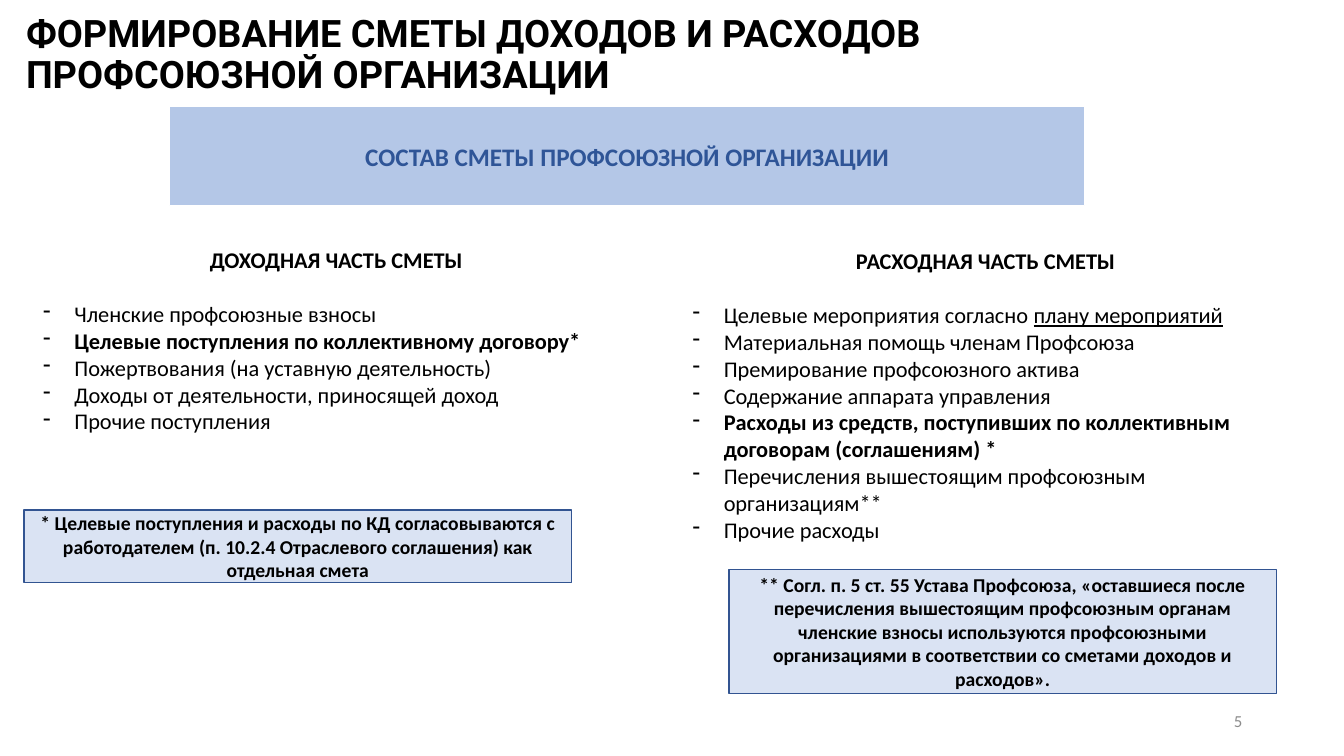
from lxml import etree
from pptx import Presentation
from pptx import util as u
from pptx.dml.color import RGBColor
from pptx.enum import shapes, text
from pptx.oxml import parse_xml
from pptx.oxml.ns import qn

DRAWING_NS = "http://schemas.openxmlformats.org/drawingml/2006/main"
TITLE_SHADOW = (
    f'<a:effectLst xmlns:a="{DRAWING_NS}"><a:outerShdw blurRad="50800" dist="38100" '
    'dir="5400000" algn="t" rotWithShape="0"><a:srgbClr val="000000">'
    '<a:alpha val="50000"/></a:srgbClr></a:outerShdw></a:effectLst>')
LEFT, CENTER, RIGHT = text.PP_ALIGN.LEFT, text.PP_ALIGN.CENTER, text.PP_ALIGN.RIGHT
TOP, MIDDLE = text.MSO_ANCHOR.TOP, text.MSO_ANCHOR.MIDDLE

INCOME = [
    [("Членские профсоюзные взносы", {})],
    [("Целевые поступления по коллективному договору*", {"bold": True})],
    [("Пожертвования (на уставную деятельность)", {})],
    [("Доходы от деятельности, приносящей доход", {})],
    [("Прочие поступления", {})],
]
EXPENSES = [
    [("Целевые мероприятия согласно ", {}), ("плану мероприятий", {"underline": True})],
    [("Материальная помощь членам Профсоюза", {})],
    [("Премирование профсоюзного актива", {})],
    [("Содержание аппарата управления", {})],
    [("Расходы из средств, поступивших по коллективным договорам (соглашениям) *",
      {"bold": True})],
    [("Перечисления вышестоящим профсоюзным организациям**", {})],
    [("Прочие расходы", {})],
]
INCOME_NOTE = ("* Целевые поступления и расходы по КД согласовываются с работодателем "
               "(п. 10.2.4 Отраслевого соглашения) как отдельная смета")
EXPENSE_NOTE = ("** Согл. п. 5 ст. 55 Устава Профсоюза, «оставшиеся после перечисления "
                "вышестоящим профсоюзным органам членские взносы используются "
                "профсоюзными организациями в соответствии со сметами доходов и расходов».")


def color(value):
    """Turn a hex string into a colour."""
    return RGBColor.from_string(value)


def write(para, words, size=16, font="Calibri", fill="000000", bold=False,
          underline=False, align=LEFT):
    """Add one formatted span to a paragraph and return it."""
    para.alignment = align
    span = para.add_run()
    span.text = words
    span.font.size = u.Pt(size)
    span.font.name = font
    span.font.bold = bold
    span.font.underline = underline
    span.font.color.rgb = color(fill)
    return span


def add_text_box(page, box, anchor=MIDDLE):
    """Add a wrapping text box and return its first paragraph."""
    frame = page.shapes.add_textbox(*map(u.Inches, box)).text_frame
    frame.word_wrap = True
    frame.vertical_anchor = anchor
    return frame.paragraphs[0]


def add_panel(page, box, fill, line, width=0.75, anchor=MIDDLE):
    """Add a filled, outlined rectangle and return its text frame."""
    panel = page.shapes.add_shape(shapes.MSO_SHAPE.RECTANGLE, *map(u.Inches, box))
    panel.shadow.inherit = False
    panel.fill.solid()
    panel.fill.fore_color.rgb = color(fill)
    panel.line.color.rgb = color(line)
    panel.line.width = u.Pt(width)
    frame = panel.text_frame
    frame.word_wrap = True
    frame.vertical_anchor = anchor
    return frame


def add_title(page, box, words):
    """Add the slide title with its soft text shadow."""
    para = add_text_box(page, box)
    para.line_spacing = 0.9
    span = write(para, words, size=27, font="Roboto", bold=True)
    span.font.fill._xPr.find(qn("a:solidFill")).addnext(parse_xml(TITLE_SHADOW))


def add_banner(page, box, words):
    """Add the wide heading band."""
    frame = add_panel(page, box, "B4C7E7", "FFFFFF")
    write(frame.paragraphs[0], words, size=18, fill="2F5597", bold=True, align=CENTER)


def add_budget_part(page, box, heading, items):
    """Add a heading with a dashed list below it."""
    frame = add_panel(page, box, "FFFFFF", "FFFFFF", anchor=TOP)
    head = frame.paragraphs[0]
    write(head, heading, bold=True, align=CENTER)
    head.space_after = u.Pt(19.5)
    indent = u.Inches(0.31)
    for item in items:
        para = frame.add_paragraph()
        properties = para._p.get_or_add_pPr()
        properties.set("marL", str(indent))
        properties.set("indent", str(-indent))
        etree.SubElement(properties, qn("a:buChar")).set("char", "-")
        for words, style in item:
            write(para, words, **style)


def add_note(page, box, words):
    """Add a framed footnote."""
    frame = add_panel(page, box, "DAE3F3", "325491", width=1)
    write(frame.paragraphs[0], words, size=14, bold=True, align=CENTER)


def add_page_number(page, box, number):
    """Add the page number."""
    write(add_text_box(page, box), number, size=12, fill="8C8C8C", align=RIGHT)


def main():
    """Build and save the slide."""
    deck = Presentation()
    deck.slide_width, deck.slide_height = u.Inches(13.33), u.Inches(7.5)
    page = deck.slides.add_slide(deck.slide_layouts[6])
    add_title(page, (0.16, -0.05, 10.4, 1.21),
              "ФОРМИРОВАНИЕ СМЕТЫ ДОХОДОВ И РАСХОДОВ ПРОФСОЮЗНОЙ ОРГАНИЗАЦИИ")
    add_banner(page, (1.68, 1.06, 9.08, 0.98), "СОСТАВ СМЕТЫ ПРОФСОЮЗНОЙ ОРГАНИЗАЦИИ")
    add_budget_part(page, (0.33, 2.39, 6.01, 3.14), "ДОХОДНАЯ ЧАСТЬ СМЕТЫ", INCOME)
    add_budget_part(page, (6.77, 2.4, 6.01, 3.48), "РАСХОДНАЯ ЧАСТЬ СМЕТЫ", EXPENSES)
    add_note(page, (0.24, 5.06, 5.43, 0.72), INCOME_NOTE)
    add_note(page, (7.23, 5.65, 5.43, 1.23), EXPENSE_NOTE)
    add_page_number(page, (9.42, 6.95, 3, 0.4), "5")
    deck.save("out.pptx")


if __name__ == "__main__":
    main()
